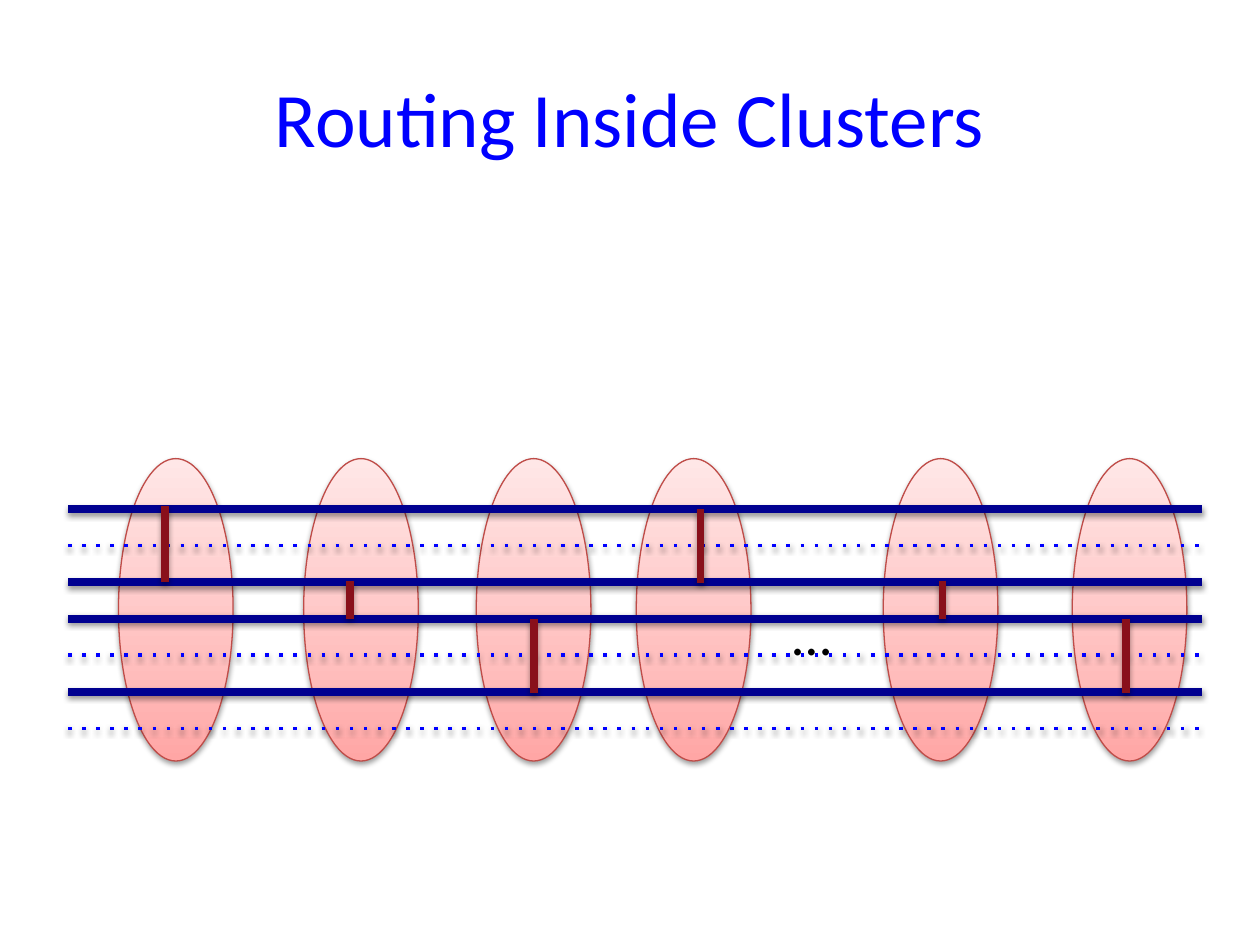
"""Build the slide on routing inside clusters."""
import copy

import pptx
import pptx.dml.color
import pptx.enum.dml
import pptx.enum.shapes
import pptx.enum.text
import pptx.oxml
import pptx.oxml.ns
import pptx.util

Inches = pptx.util.Inches
qn = pptx.oxml.ns.qn

COLORS = {
    "title": "0000FF",
    "ellipsis": "000000",
    "outline": "BF4C48",
    "track": "000090",
    "dotted": "0000FF",
    "link": "89101B",
}
CLUSTER_STOPS = [(0, "FFA6A5"), (0.35, "FFC0BF"), (1, "FFE7E7")]
SHADOW = (
    f'<a:effectLst {pptx.oxml.ns.nsdecls("a")}>'
    '<a:outerShdw blurRad="40000" dist="20000" dir="5400000" rotWithShape="0">'
    '<a:srgbClr val="000000"><a:alpha val="38000"/></a:srgbClr>'
    "</a:outerShdw></a:effectLst>"
)


def finish(shape, color, width):
    shape.line.color.rgb = pptx.dml.color.RGBColor.from_string(COLORS[color])
    shape.line.width = pptx.util.Pt(width)
    shape._element.spPr.append(pptx.oxml.parse_xml(SHADOW))


def add_line(start, end, color, width):
    line = slide.shapes.add_connector(
        pptx.enum.shapes.MSO_CONNECTOR.STRAIGHT, *map(Inches, start + end)
    )
    finish(line, color, width)
    return line


presentation = pptx.Presentation()
presentation.slide_width = Inches(10)
presentation.slide_height = Inches(7.5)
slide = presentation.slides.add_slide(presentation.slide_layouts[6])

for left in (5.05, 8.51, 7.01, 3.78, 2.41, 0.94):
    cluster = slide.shapes.add_shape(
        pptx.enum.shapes.MSO_SHAPE.OVAL, *map(Inches, (left, 3.64, 0.91, 2.4))
    )
    cluster.fill.gradient()
    cluster.fill.gradient_angle = 90
    stop_list = cluster._element.spPr.find(".//" + qn("a:gsLst"))
    stop_list.append(copy.deepcopy(stop_list[0]))
    for stop, (position, color) in zip(cluster.fill.gradient_stops, CLUSTER_STOPS):
        stop.position = position
        stop.color.rgb = pptx.dml.color.RGBColor.from_string(color)
    finish(cluster, "outline", 0.75)

texts = [
    ("Routing Inside Clusters", (0.5, 0.3, 9, 1.25), "title", 44, "MIDDLE", "CENTER"),
    ("…", (6.19, 4.71, 0.63, 0.57), "ellipsis", 32, "TOP", "LEFT"),
]
for text, box, color, size, anchor, alignment in texts:
    frame = slide.shapes.add_textbox(*map(Inches, box)).text_frame
    frame.word_wrap = True
    frame.vertical_anchor = pptx.enum.text.MSO_ANCHOR[anchor]
    paragraph = frame.paragraphs[0]
    paragraph.alignment = pptx.enum.text.PP_ALIGN[alignment]
    run = paragraph.add_run()
    run.text = text
    for name, value in {"name": "Calibri", "size": pptx.util.Pt(size)}.items():
        setattr(run.font, name, value)
    run.font.color.rgb = pptx.dml.color.RGBColor.from_string(COLORS[color])

track_styles = ["track", "dotted", "track", "track", "dotted", "track", "dotted"]
for index, style in enumerate(track_styles):
    y = 4.04 + 0.29 * index
    track = add_line((0.54, y), (9.54, y), style, 2 if style == "dotted" else 4.5)
    if style == "dotted":
        track.line.dash_style = pptx.enum.dml.MSO_LINE.ROUND_DOT
        track._element.spPr.find(".//" + qn("a:prstDash")).set("val", "dot")

links = [
    (1.31, 4.02, 4.62),
    (2.78, 4.61, 4.91),
    (4.24, 4.91, 5.5),
    (5.56, 4.04, 4.63),
    (8.94, 4.91, 5.5),
    (7.48, 4.61, 4.91),
]
for x, top, bottom in links:
    add_line((x, top), (x, bottom), "link", 4.5)

presentation.save("out.pptx")
